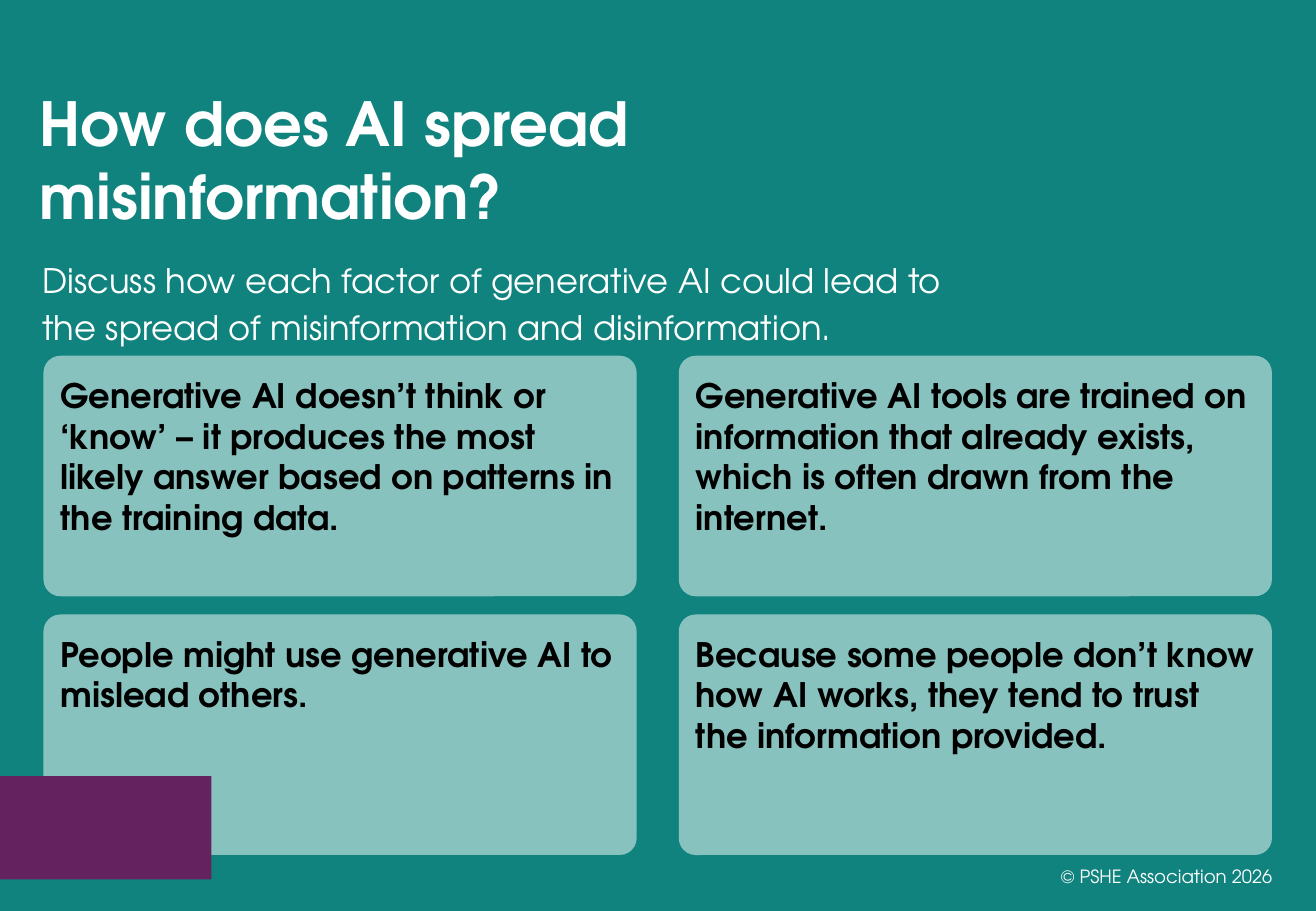
from pptx import Presentation
from pptx.dml.color import RGBColor
from pptx.enum.shapes import MSO_SHAPE as Geo
from pptx.enum.text import MSO_ANCHOR as Anchor, PP_ALIGN as Align
from pptx.util import Cm, Pt

# Content
TITLE = "How does AI spread misinformation?"
TASK = ("Discuss how each factor of generative AI could lead to "
        "the spread of misinformation and disinformation.")
FACTORS = [
    "Generative AI doesn’t think or ‘know’ – it produces the most "
    "likely answer based on patterns in the training data.",
    "Generative AI tools are trained on information that already exists, "
    "which is often drawn from the internet.",
    "People might use generative AI to mislead others.",
    "Because some people don’t know how AI works, they tend to trust "
    "the information provided.",
]
CREDIT = "© PSHE Association 2026"

# Style
FONT = "TeX Gyre Adventor"
TEAL, MINT, PLUM = "10837E", "88C2BF", "64235E"
WHITE, BLACK = "FFFFFF", "000000"

# Card grid, in cm
LEFT, TOP = 0.91, 7.44
WIDE, HIGH = 12.4, 5.03
GAP_X, GAP_Y = 0.88, 0.38
COLS = 2


def paint(fill, color):
    fill.solid()
    fill.fore_color.rgb = RGBColor.from_string(color)


def write(shape, text, size, color, bold=False, line=None,
          align=Align.LEFT, anchor=Anchor.TOP):
    frame = shape.text_frame
    frame.word_wrap = True
    frame.vertical_anchor = anchor
    frame.text = text
    para = frame.paragraphs[0]
    para.alignment = align
    if line:
        para.line_spacing = Pt(line)
    font = para.runs[0].font
    font.name, font.size, font.bold = FONT, Pt(size), bold
    paint(font.fill, color)


def block(slide, kind, box, color):
    shape = slide.shapes.add_shape(kind, *map(Cm, box))
    shape.shadow.inherit = False
    paint(shape.fill, color)
    shape.line.fill.background()
    return shape


def label(slide, box, *args, **style):
    write(slide.shapes.add_textbox(*map(Cm, box)), *args, **style)


def main():
    deck = Presentation()
    deck.slide_width, deck.slide_height = Cm(27.51), Cm(19.05)
    slide = deck.slides.add_slide(deck.slide_layouts[6])
    paint(slide.background.fill, TEAL)

    # Factor cards
    for i, text in enumerate(FACTORS):
        row, col = divmod(i, COLS)
        box = (LEFT + col * (WIDE + GAP_X), TOP + row * (HIGH + GAP_Y),
               WIDE, HIGH)
        card = block(slide, Geo.ROUNDED_RECTANGLE, box, MINT)
        card.adjustments[0] = 0.07
        frame = card.text_frame
        frame.margin_left = frame.margin_right = Cm(0.25)
        frame.margin_top, frame.margin_bottom = Cm(0.3), Cm(0.13)
        write(card, text, 20, BLACK, bold=True)

    # Credit, title and task
    label(slide, (20.65, 17.81, 6.2, 1.02), CREDIT, 10.8, WHITE,
          align=Align.RIGHT, anchor=Anchor.MIDDLE)
    label(slide, (0.58, 1.68, 18.06, 3.48), TITLE, 36, WHITE,
          bold=True, line=43)
    label(slide, (0.64, 5.16, 19.58, 2.49), TASK, 20, WHITE, line=28)

    # Corner block
    block(slide, Geo.RECTANGLE, (0, 16.23, 4.42, 2.16), PLUM)

    deck.save("out.pptx")


if __name__ == "__main__":
    main()
